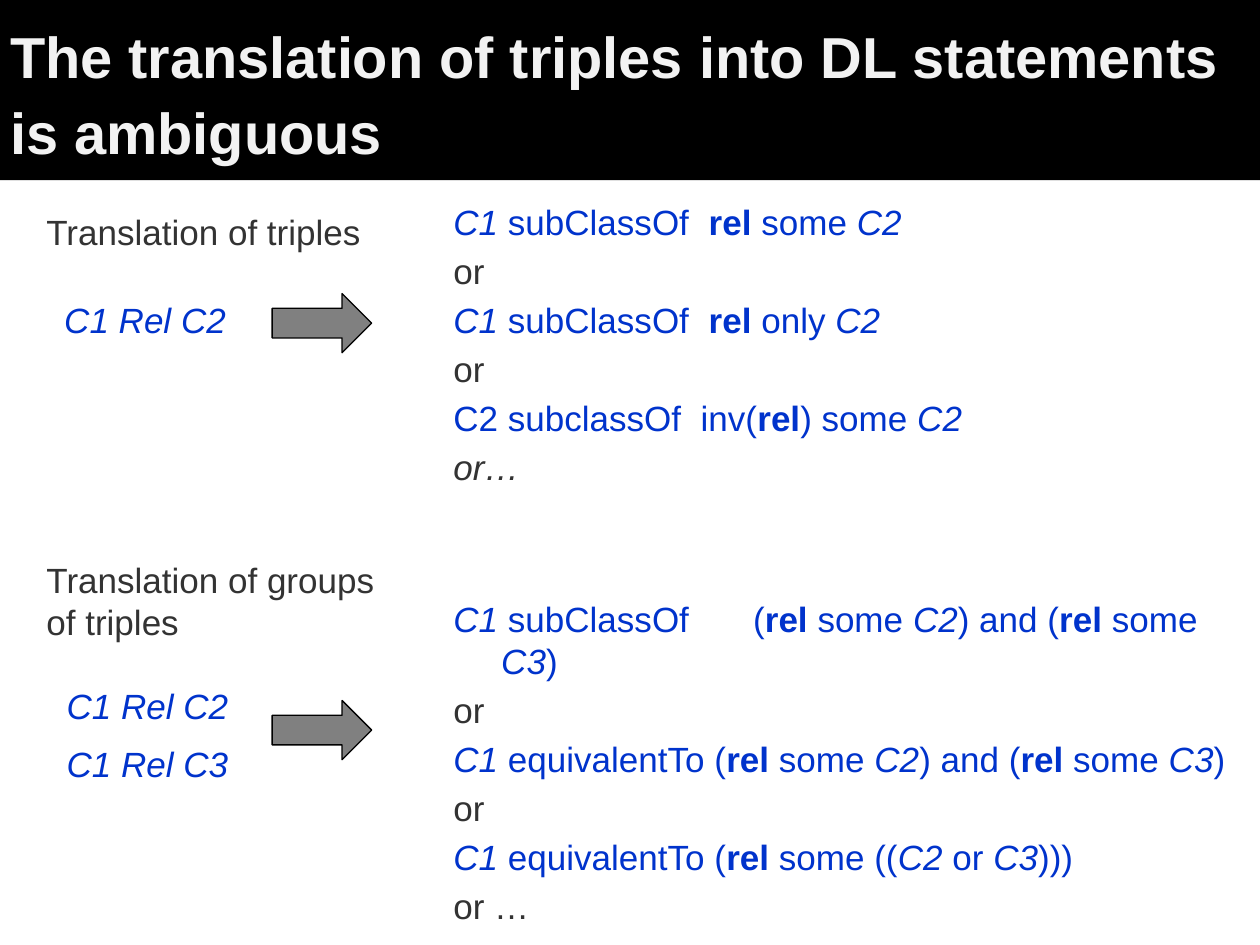
"""Build a slide on the ambiguity of translating triples into DL statements."""
from dataclasses import dataclass

from pptx import Presentation
from pptx.dml.color import RGBColor as Color
from pptx.enum.shapes import MSO_SHAPE as Preset
from pptx.enum.text import MSO_ANCHOR as Anchor
from pptx.enum.text import MSO_AUTO_SIZE as AutoSize
from pptx.enum.text import PP_ALIGN as Align
from pptx.oxml.xmlchemy import OxmlElement
from pptx.util import Inches, Pt


@dataclass(frozen=True)
class Theme:
    font: str = "Arial"
    title_size: float = 33
    text_size: float = 20
    space_before: float = 4
    banner: Color = Color(0x00, 0x00, 0x00)
    title: Color = Color(0xF2, 0xF2, 0xF2)
    code: Color = Color(0x00, 0x33, 0xCC)
    prose: Color = Color(0x33, 0x33, 0x33)
    arrow: Color = Color(0x80, 0x80, 0x80)
    outline: Color = Color(0x00, 0x00, 0x00)


THEME = Theme()

C1, C2, C3 = (("C1", "i"), ("C2", "i"), ("C3", "i"))
REL, SOME = ("rel ", "b"), ("some ", "")
OR = [("or", "p")]
BOTH = [REL, SOME, C2, (") and (", ""), REL, SOME, C3, (")", "")]

TRIPLE_READINGS = [
    [C1, (" subClassOf  ", ""), REL, SOME, C2],
    OR,
    [C1, (" subClassOf  ", ""), REL, ("only", ""), (" C2", "i")],
    OR,
    [("C2 subclassOf  inv(", ""), ("rel", "b"), (") some ", ""), C2],
    [("or…", "pi")],
]
GROUP_READINGS = [
    [C1, (" subClassOf \t(", ""), *BOTH],
    OR,
    [("C1 ", "i"), ("equivalentTo (", ""), *BOTH],
    OR,
    [C1, (" equivalentTo (", ""), REL, ("some ((", ""), ("C2 ", "i"),
     ("or ", ""), C3, (")))", "")],
    [("or …", "p")],
]


def place(shape, left, top, width, height):
    """Move and size a shape, in inches."""
    shape.left, shape.top = Inches(left), Inches(top)
    shape.width, shape.height = Inches(width), Inches(height)


def add_span(para, text, color, size=THEME.text_size, bold=False, italic=False):
    """Append one formatted run."""
    span = para.add_run()
    span.text = text
    font = span.font
    font.name, font.size, font.color.rgb = THEME.font, Pt(size), color
    font.bold, font.italic = bold, italic


def set_hanging(para, indent):
    """Give a paragraph a hanging indent without a bullet."""
    properties = para._p.get_or_add_pPr()
    properties.set("marL", str(Inches(indent)))
    properties.set("indent", str(-Inches(indent)))
    properties.append(OxmlElement("a:buNone"))


def fill_statements(frame, lines, indent=0.38, line_spacing=None):
    """Write statements; style letters are b bold, i italic, p prose colour."""
    frame.word_wrap = True
    for number, line in enumerate(lines):
        para = frame.add_paragraph() if number else frame.paragraphs[0]
        para.space_before = Pt(THEME.space_before)
        if line_spacing:
            para.line_spacing = line_spacing
        set_hanging(para, indent)
        for text, style in line:
            color = THEME.prose if "p" in style else THEME.code
            add_span(para, text, color, bold="b" in style, italic="i" in style)


def set_margins(frame):
    """Apply the narrow placeholder margins."""
    frame.margin_left = frame.margin_right = Inches(0.08)
    frame.margin_top = frame.margin_bottom = Inches(0.04)
    frame.auto_size = AutoSize.NONE


def fill_title(title, text):
    """Turn the title placeholder into a full-width banner."""
    place(title, 0, 0, 10, 1.43)
    title.fill.solid()
    title.fill.fore_color.rgb = THEME.banner
    frame = title.text_frame
    set_margins(frame)
    frame.word_wrap = True
    frame.vertical_anchor = Anchor.MIDDLE
    para = frame.paragraphs[0]
    para.alignment, para.line_spacing = Align.LEFT, 1.1
    add_span(para, text, THEME.title, THEME.title_size, bold=True)


def add_statements(page, bounds, lines, line_spacing=None):
    """Add a text box of statements."""
    box = page.shapes.add_textbox(*map(Inches, bounds))
    fill_statements(box.text_frame, lines, line_spacing=line_spacing)


def add_label(page, bounds, lines):
    """Add a heading whose lines are broken by hand."""
    box = page.shapes.add_textbox(*map(Inches, bounds))
    frame = box.text_frame
    frame.word_wrap, frame.auto_size = False, AutoSize.SHAPE_TO_FIT_TEXT
    para = frame.paragraphs[0]
    for number, line in enumerate(lines):
        if number:
            para.add_line_break()
        add_span(para, line, THEME.prose)


def add_arrow(page, top):
    """Add a block arrow from the triples to their readings."""
    bounds = map(Inches, (2.16, top, 0.79, 0.47))
    arrow = page.shapes.add_shape(Preset.RIGHT_ARROW, *bounds)
    arrow.shadow.inherit = False
    arrow.fill.solid()
    arrow.fill.fore_color.rgb = THEME.arrow
    arrow.line.color.rgb, arrow.line.width = THEME.outline, Pt(0.75)


def main():
    """Build and save the deck."""
    deck = Presentation()
    deck.slide_width, deck.slide_height = Inches(10), Inches(7.5)
    page = deck.slides.add_slide(deck.slide_layouts[1])

    title, body = page.placeholders
    fill_title(title, "The translation of triples into DL statements is ambiguous")
    place(body, 0.43, 2.33, 2.44, 0.63)
    set_margins(body.text_frame)
    fill_statements(body.text_frame, [[("C1 Rel C2", "i")]], indent=0.31)

    add_statements(page, (3.5, 1.54, 5.2, 2.13), TRIPLE_READINGS)
    add_statements(page, (0.43, 5.32, 2.44, 0.63),
                   [[("C1 Rel C2", "i")], [("C1 Rel C3", "i")]], line_spacing=1.2)
    add_statements(page, (3.5, 4.69, 6.5, 2.99), GROUP_READINGS)

    for top in (2.33, 5.56):
        add_arrow(page, top)
    add_label(page, (0.27, 1.62, 2.73, 0.44), ["Translation of triples"])
    add_label(page, (0.27, 4.38, 2.91, 0.77), ["Translation of groups ", "of triples"])

    deck.save("out.pptx")


if __name__ == "__main__":
    main()
